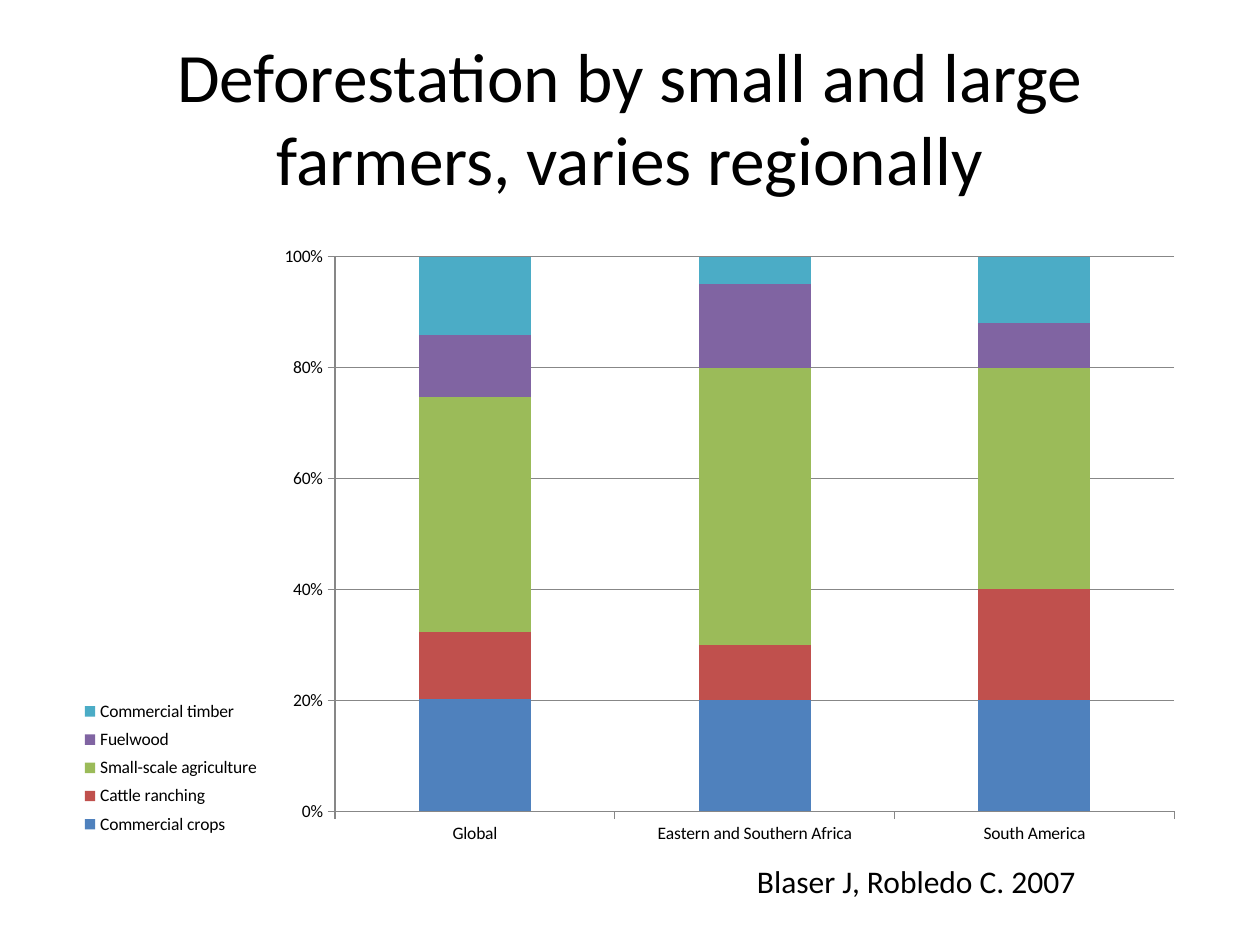
from lxml.etree import SubElement
from pptx import Presentation
from pptx.chart.data import CategoryChartData
from pptx.dml.color import RGBColor
from pptx.enum.chart import XL_CHART_TYPE as Chart, XL_LEGEND_POSITION as Legend, XL_TICK_MARK as Tick
from pptx.enum.text import MSO_ANCHOR as Anchor, MSO_AUTO_SIZE as AutoSize, PP_ALIGN as Align
from pptx.oxml.ns import qn
from pptx.util import Cm, Pt

COLORS = {
    "text": "000000",
    "axis": "878787",
    "Commercial crops": "4F81BD",
    "Cattle ranching": "C0504D",
    "Small-scale agriculture": "9BBB59",
    "Fuelwood": "8064A2",
    "Commercial timber": "4BACC6",
}
REGIONS = ["Global", "Eastern and Southern Africa", "South America"]
CAUSES = {
    "Commercial crops": (20, 20, 20),
    "Cattle ranching": (12, 10, 20),
    "Small-scale agriculture": (42, 50, 40),
    "Fuelwood": (11, 15, 8),
    "Commercial timber": (14, 5, 12),
}


def rgb(name):
    return RGBColor.from_string(COLORS[name])


def set_layout(parent, after, inner=False, **fractions):
    """Place a plot area or legend by fractions of the chart's size."""
    for old in parent.findall(qn("c:layout")):
        parent.remove(old)
    layout = parent.makeelement(qn("c:layout"))
    manual = SubElement(layout, qn("c:manualLayout"))
    settings = {"layoutTarget": "inner"} if inner else {}
    settings.update(xMode="edge", yMode="edge", **fractions)
    for tag, value in settings.items():
        SubElement(manual, qn("c:" + tag)).set("val", str(value))
    if after is None:
        parent.insert(0, layout)
    else:
        after.addnext(layout)


class SlideBuilder:
    def __init__(self, slide, font="Calibri"):
        self.s = slide
        self.font = font

    def style(self, font, size):
        font.name, font.size = self.font, Pt(size)
        font.color.rgb = rgb("text")

    def title(self, text, box, size):
        sp = self.s.shapes.title
        sp.left, sp.top, sp.width, sp.height = map(Cm, box)
        tf = sp.text_frame
        tf.text, tf.word_wrap, tf.vertical_anchor = text, True, Anchor.MIDDLE
        p = tf.paragraphs[0]
        p.alignment = Align.CENTER
        self.style(p.font, size)

    def text(self, text, box, size):
        tf = self.s.shapes.add_textbox(*map(Cm, box)).text_frame
        tf.text, tf.word_wrap = text, True
        tf.auto_size = AutoSize.SHAPE_TO_FIT_TEXT
        self.style(tf.paragraphs[0].font, size)

    def share_chart(self, categories, series, box, size):
        data = CategoryChartData()
        data.categories = categories
        for name, values in series.items():
            data.add_series(name, values)
        chart = self.s.shapes.add_chart(Chart.COLUMN_STACKED_100, *map(Cm, box), data).chart
        self.style(chart.font, size)
        chart.has_title = False

        plot = chart.plots[0]
        plot.gap_width, plot.overlap, plot.vary_by_categories = 150, 100, False
        for ser in plot.series:
            ser.format.fill.solid()
            ser.format.fill.fore_color.rgb = rgb(ser.name)

        values = chart.value_axis
        values.major_unit = 0.2
        values.has_major_gridlines = True
        values.tick_labels.number_format = "0%"
        values.tick_labels.number_format_is_linked = False
        for axis in (chart.category_axis, values):
            axis.major_tick_mark = Tick.OUTSIDE
        for part in (chart.category_axis, values, values.major_gridlines):
            part.format.line.color.rgb = rgb("axis")
            part.format.line.width = Pt(0.75)

        chart.has_legend = True
        legend = chart.legend
        legend.position, legend.include_in_layout = Legend.LEFT, False
        root = chart.element
        set_layout(root.find(".//" + qn("c:plotArea")), None, inner=True,
                   x=0.24, y=0.04, w=0.74, h=0.89)
        set_layout(root.find(".//" + qn("c:legend")),
                   root.find(".//" + qn("c:legendPos")),
                   x=0.01, y=0.74, w=0.17, h=0.24)


def main():
    prs = Presentation()
    prs.slide_width, prs.slide_height = Cm(25.4), Cm(19.05)
    slide = SlideBuilder(prs.slides.add_slide(prs.slide_layouts[5]))
    slide.title("Deforestation by small and large farmers, varies regionally",
                (1.27, 0.76, 22.86, 3.18), 39.6)
    slide.share_chart(REGIONS, CAUSES, (1.27, 4.67, 22.86, 12.57), 10)
    slide.text("Blaser J, Robledo C. 2007", (15.01, 17.25, 10.39, 1.03), 18)
    prs.save("out.pptx")


if __name__ == "__main__":
    main()
